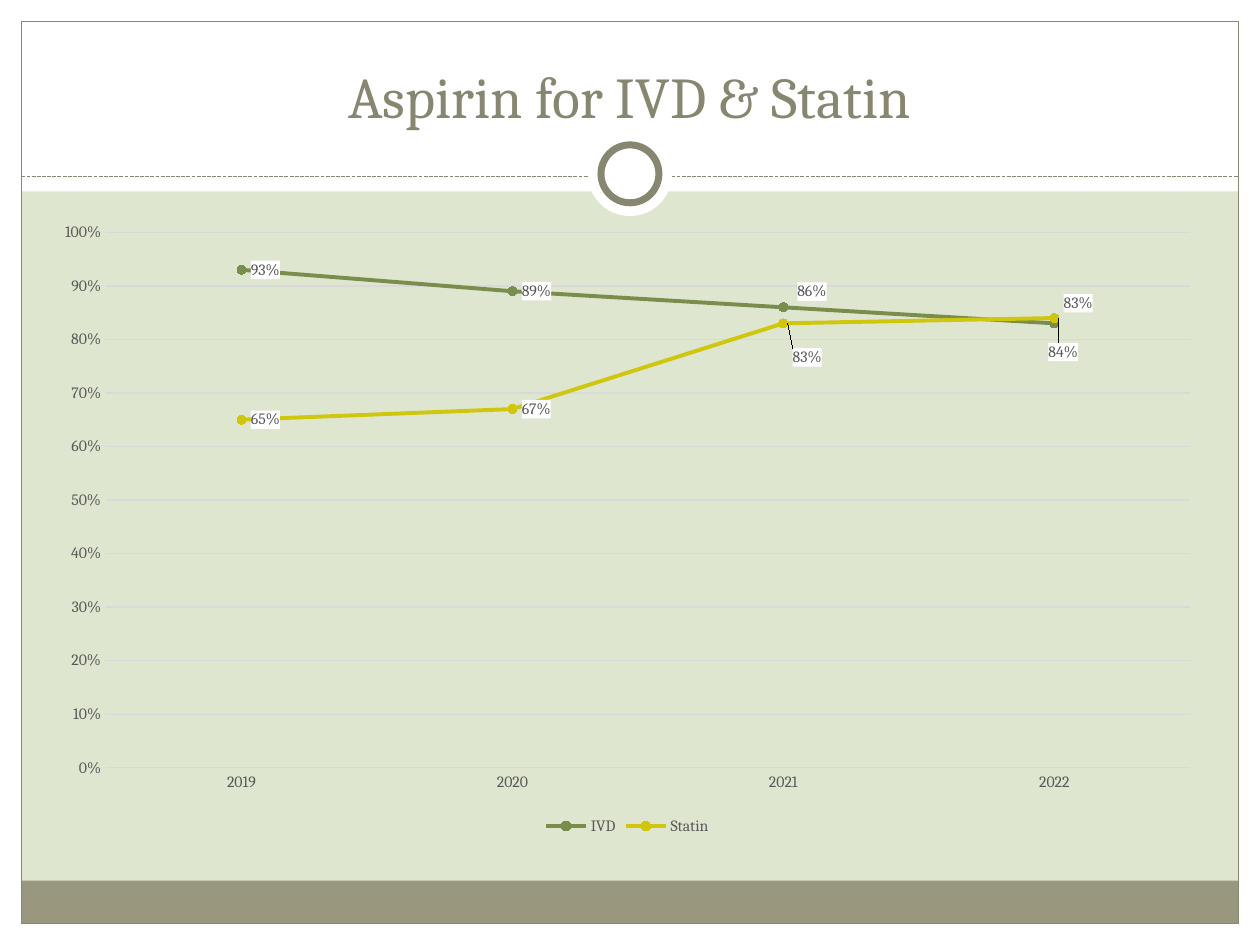
from pptx import Presentation
from pptx.chart.data import CategoryChartData
from pptx.dml.color import RGBColor
from pptx.enum.chart import (XL_CHART_TYPE, XL_LABEL_POSITION,
                             XL_LEGEND_POSITION, XL_MARKER_STYLE, XL_TICK_MARK)
from pptx.enum.dml import MSO_LINE
from pptx.enum.shapes import MSO_CONNECTOR, MSO_SHAPE
from pptx.enum.text import MSO_ANCHOR, PP_ALIGN
from pptx.oxml import parse_xml
from pptx.oxml.ns import nsdecls
from pptx.util import Inches, Pt

COLORS = {"sage": "DFE6D0", "white": "FFFFFF", "footer": "99987F",
          "olive": "878670", "text": "595959", "grid": "D9D9D9",
          "IVD": "798E4C", "Statin": "CFC60D"}
FONT = "Cambria"
YEARS = ["2019", "2020", "2021", "2022"]
RATES = {"IVD": [0.93, 0.89, 0.86, 0.83], "Statin": [0.65, 0.67, 0.83, 0.84]}
# Label shifts as fractions of the chart: point index -> (x, y)
LABEL_SHIFTS = {"IVD": {2: (0.004, -0.025), 3: (0, -0.032)},
                "Statin": {2: (0, 0.054), 3: (-0.013, 0.054)}}


def rgb(name):
    return RGBColor.from_string(COLORS[name])


def format_font(font, size, color):
    for name, value in {"name": FONT, "size": Pt(size), "bold": False}.items():
        setattr(font, name, value)
    font.color.rgb = rgb(color)


def format_line(line, color, width):
    line.color.rgb = rgb(color)
    line.width = Pt(width)


def add_panel(slide, box, fill=None, line=None, width=0.75,
              kind=MSO_SHAPE.RECTANGLE):
    panel = slide.shapes.add_shape(kind, *map(Inches, box))
    panel.shadow.inherit = False
    if fill:
        panel.fill.solid()
        panel.fill.fore_color.rgb = rgb(fill)
    else:
        panel.fill.background()
    if line:
        format_line(panel.line, line, width)
    else:
        panel.line.fill.background()


def add_frame(slide, box):
    left, top, width, height = box
    edge = 0.17
    right, bottom = left + width, top + height
    # White margins and header, footer band, outline
    add_panel(slide, (left, bottom - edge, width, edge), "white")
    add_panel(slide, (left, top, width, 1.52), "white")
    for side in (left, right - edge):
        add_panel(slide, (side, top, edge, height), "white")
    add_panel(slide, (left + edge, bottom - 0.51, width - 2 * edge, 0.34), "footer")
    add_panel(slide, (left + edge, top + edge, width - 2 * edge,
                      height - 2 * edge), line="olive")
    # Dashed divider
    divider = slide.shapes.add_connector(
        MSO_CONNECTOR.STRAIGHT, Inches(left + edge), Inches(top + 1.4),
        Inches(right - edge), Inches(top + 1.4))
    format_line(divider.line, "olive", 0.75)
    divider.line.dash_style = MSO_LINE.SQUARE_DOT
    divider._element.spPr.append(parse_xml(f"<a:effectLst {nsdecls('a')}/>"))
    # Ring on the divider
    center_x, center_y = left + width / 2, top + 1.38
    for size, line in ((0.67, None), (0.46, "olive")):
        add_panel(slide, (center_x - size / 2, center_y - size / 2, size, size),
                  "white", line, 4, MSO_SHAPE.OVAL)


def place_title(slide, box):
    title = slide.shapes.title
    title.left, title.top, title.width, title.height = map(Inches, box)
    frame = title.text_frame
    frame.text = "Aspirin for IVD & Statin"
    frame.vertical_anchor = MSO_ANCHOR.BOTTOM
    heading = frame.paragraphs[0]
    heading.alignment = PP_ALIGN.CENTER
    format_font(heading.runs[0].font, 33, "olive")
    slide.shapes._spTree.append(title._element)  # in front of the header


def layout_xml(target="", **values):
    target_tag = f'<c:layoutTarget val="{target}"/>' if target else ""
    modes = "".join(f'<c:{axis}Mode val="edge"/>' for axis in "xy") if target else ""
    places = "".join(f'<c:{key} val="{value}"/>' for key, value in values.items())
    return parse_xml(f"<c:layout {nsdecls('c')}><c:manualLayout>{target_tag}"
                     f"{modes}{places}</c:manualLayout></c:layout>")


def label_fill():
    return parse_xml(f"<c:spPr {nsdecls('c', 'a')}><a:solidFill><a:srgbClr "
                     f'val="{COLORS["white"]}"/></a:solidFill></c:spPr>')


def format_labels(series):
    labels = series.data_labels
    labels.show_value = True
    labels.number_format = "0%"
    labels.number_format_is_linked = False
    labels.position = XL_LABEL_POSITION.RIGHT
    format_font(labels.font, 9, "text")
    labels._element.find("{*}numFmt").addnext(label_fill())
    # Labels moved clear of the lines
    for index, (x, y) in LABEL_SHIFTS[series.name].items():
        label = series.points[index].data_label
        format_font(label.font, 9, "text")
        label.position = XL_LABEL_POSITION.RIGHT
        point_index = labels._element.xpath(f"c:dLbl/c:idx[@val='{index}']")[0]
        number_format = parse_xml(f"<c:numFmt {nsdecls('c')} "
                                  'formatCode="0%" sourceLinked="0"/>')
        for part in (label_fill(), number_format, layout_xml(x=x, y=y)):
            point_index.addnext(part)


def format_axes(chart):
    for axis in (chart.category_axis, chart.value_axis):
        axis.major_tick_mark = axis.minor_tick_mark = XL_TICK_MARK.NONE
        format_font(axis.tick_labels.font, 9, "text")
    format_line(chart.category_axis.format.line, "grid", 0.75)
    rates = chart.value_axis
    scale = {"minimum_scale": 0, "maximum_scale": 1, "major_unit": 0.1,
             "has_major_gridlines": True}
    for name, value in scale.items():
        setattr(rates, name, value)
    rates.tick_labels.number_format = "0%"
    rates.tick_labels.number_format_is_linked = False
    rates.format.line.fill.background()
    format_line(rates.major_gridlines.format.line, "grid", 0.75)


def add_rates_chart(slide, box):
    data = CategoryChartData(number_format="0%")
    data.categories = YEARS
    for name, values in RATES.items():
        data.add_series(name, values)
    chart = slide.shapes.add_chart(XL_CHART_TYPE.LINE_MARKERS,
                                   *map(Inches, box), data).chart
    chart.has_title = False
    chart.font.name, chart.font.size = FONT, Pt(10)
    chart.has_legend = True
    chart.legend.position = XL_LEGEND_POSITION.BOTTOM
    chart.legend.include_in_layout = False
    format_font(chart.legend.font, 9, "text")
    format_axes(chart)
    # Plot area inside the chart
    plot_area = chart._chartSpace.chart.plotArea
    for old_layout in plot_area.findall("{*}layout"):
        plot_area.remove(old_layout)
    plot_area.insert(0, layout_xml("inner", x=0.055, y=0.035, w=0.925, h=0.85))
    chart.plots[0].vary_by_categories = False
    for series in chart.plots[0].series:
        series.smooth = False
        format_line(series.format.line, series.name, 2.25)
        marker = series.marker
        marker.style, marker.size = XL_MARKER_STYLE.CIRCLE, 5
        marker.format.fill.solid()
        marker.format.fill.fore_color.rgb = rgb(series.name)
        format_line(marker.format.line, series.name, 0.75)
        format_labels(series)


def main():
    deck = Presentation()
    deck.slide_width, deck.slide_height = Inches(10), Inches(7.5)
    slide = deck.slides.add_slide(deck.slide_layouts[5])
    slide.background.fill.solid()
    slide.background.fill.fore_color.rgb = rgb("sage")
    add_frame(slide, (0, 0, 10, 7.5))
    place_title(slide, (0.33, 0.25, 9.33, 0.83))
    add_rates_chart(slide, (0.33, 1.67, 9.3, 5))
    deck.save("out.pptx")


if __name__ == "__main__":
    main()
